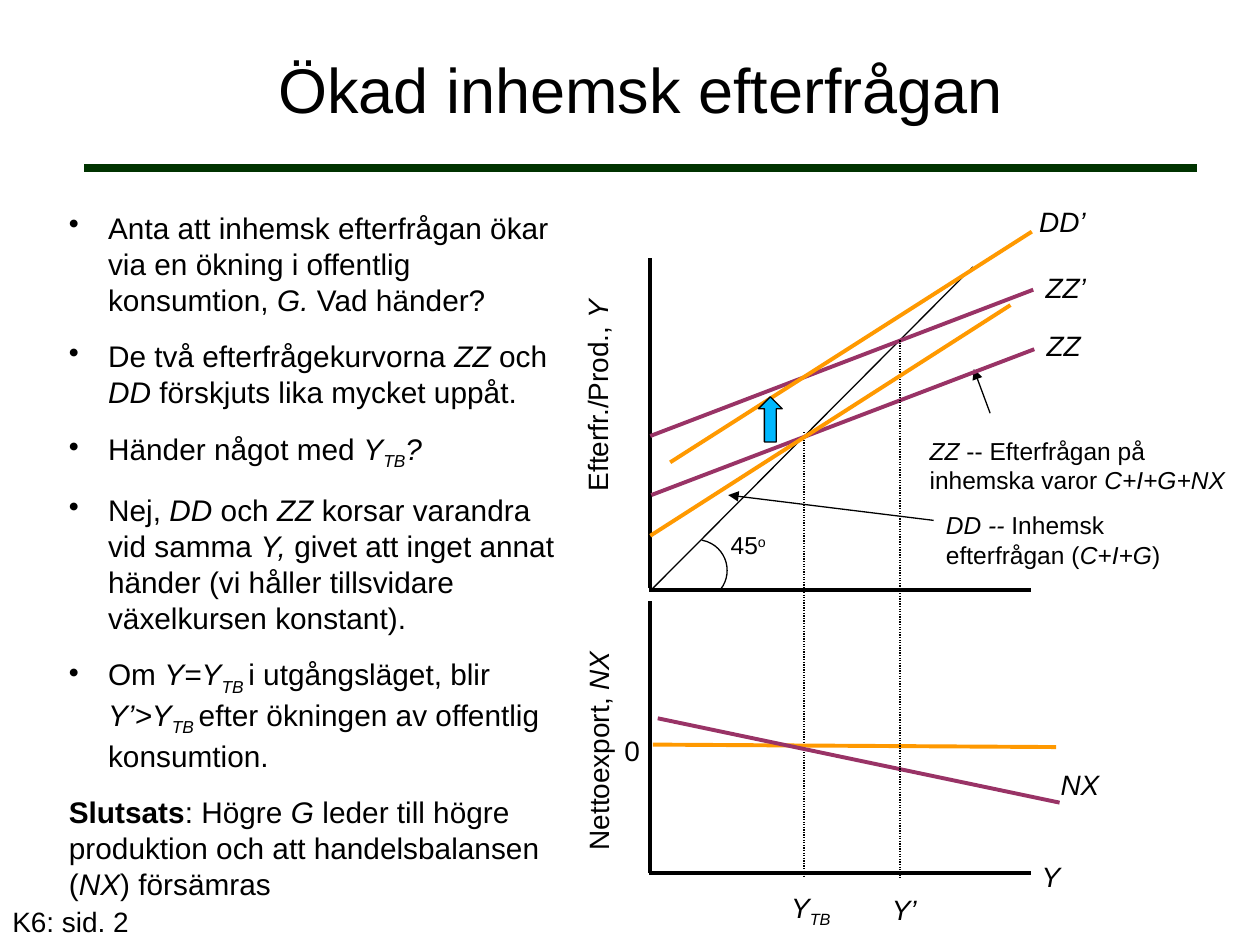
"""Build the slide on how higher domestic demand shifts output and net exports."""
from dataclasses import dataclass

from lxml import etree
from pptx import Presentation
from pptx import util as u
from pptx.dml.color import RGBColor
from pptx.enum import dml, shapes, text
from pptx.oxml.ns import qn


@dataclass(frozen=True)
class Theme:
    font: str = "Arial"
    ink: str = "000000"
    paper: str = "FFFFFF"
    rule: str = "003300"
    domestic: str = "FF9900"
    demand: str = "993366"
    shift: str = "00B8FF"
    title: int = 36
    body: int = 17
    label: int = 16
    note: int = 14
    heavy: float = 4.5
    medium: float = 2.25
    thin: float = 0.75


THEME = Theme()
TOGGLES = {"*": "italic", "#": "bold", "~": "subscript", "^": "superscript"}


@dataclass(frozen=True)
class Line:
    x1: float
    y1: float
    x2: float
    y2: float
    color: str = THEME.ink
    width: float = THEME.medium
    dotted: bool = False
    arrow: bool = False


@dataclass(frozen=True)
class Label:
    content: str
    left: float
    top: float
    width: float
    height: float = 0.94
    size: int = THEME.label
    rotation: int = 0
    wrap: bool = True
    centered: bool = False


LINES = [
    Line(1.7, 3.39, 24.13, 3.39, THEME.rule, THEME.heavy),
    Line(13.11, 5.21, 13.11, 11.86),
    Line(13.08, 11.89, 20.78, 11.89),
    Line(16.21, 8.71, 16.21, 17.68, width=THEME.thin, dotted=True),
    Line(19.96, 8.33, 19.63, 7.44, width=THEME.thin, arrow=True),
    Line(13.13, 9.98, 20.85, 7.04, THEME.demand),
    Line(13.16, 11.86, 19.61, 5.38, width=THEME.thin),
    Line(13.11, 12.12, 13.11, 17.6),
    Line(13.08, 17.6, 20.78, 17.6),
    Line(13.16, 15.01, 21.29, 15.06, THEME.domestic),
    Line(13.26, 14.48, 21.36, 16.18, THEME.demand),
    Line(18.82, 10.49, 14.68, 9.98, width=THEME.thin, arrow=True),
    Line(13.11, 8.79, 20.83, 5.84, THEME.demand),
    Line(18.14, 6.86, 18.14, 17.7, width=THEME.thin, dotted=True),
    Line(13.11, 10.8, 20.37, 6.15, THEME.domestic),
    Line(13.51, 9.32, 20.8, 4.67, THEME.domestic),
]

LABELS = [
    Label("Ökad inhemsk efterfrågan", 1.7, 0.2, 22.43, 3.18, THEME.title, centered=True),
    Label("Efterfr./Prod., *Y*", 9.83, 7.47, 4.42, rotation=270, wrap=False),
    Label("Nettoexport, *NX*", 9.8, 14.66, 4.52, rotation=270, wrap=False),
    Label("*Y~TB~*", 15.7, 17.83, 1.68),
    Label("*Y’*", 17.73, 17.86, 1.68),
    Label("*Y*", 20.75, 17.2, 0.89, wrap=False),
    Label("0", 12.34, 14.66, 0.81, wrap=False),
    Label("*NX*", 21.13, 15.34, 3.53),
    Label("*ZZ*", 20.85, 6.5, 1.55),
    Label("*ZZ’*", 20.83, 5.33, 1.55),
    Label("*DD’*", 20.7, 3.99, 1.45, wrap=False),
    Label("45^o^", 14.48, 10.57, 1.24, 0.86, THEME.note, wrap=False),
    Label("*ZZ *-- Efterfrågan på inhemska varor *C+I+G+NX*",
          18.49, 8.66, 6.93, 2.29, THEME.note),
    Label("*DD -- *Inhemsk efterfrågan (*C+I+G*)", 18.82, 10.16, 5.84, 1.45, THEME.note),
    Label("K6: sid. 2", 0, 18.11, 5.28),
]

BULLETS = [
    "Anta att inhemsk efterfrågan ökar via en ökning i offentlig konsumtion, *G. *Vad händer?",
    "De två efterfrågekurvorna *ZZ* och *DD *förskjuts lika mycket uppåt.",
    "Händer något med *Y~TB~?*",
    "Nej, *DD *och* ZZ *korsar varandra vid samma *Y, *givet att inget annat händer "
    "(vi håller tillsvidare växelkursen konstant).",
    "Om *Y=Y~TB ~*i utgångsläget, blir *Y’>Y~TB ~*efter ökningen av offentlig konsumtion.",
]
CONCLUSION = ("#Slutsats#: Högre *G *leder till högre produktion och att "
              "handelsbalansen (*NX*) försämras")


def write(paragraph, content: str, size: int) -> None:
    """Fill a paragraph, toggling styles at each marker character."""
    font = paragraph.font
    font.name, font.size = THEME.font, u.Pt(size)
    font.color.rgb = RGBColor.from_string(THEME.ink)
    active, piece = set(), ""
    for character in content + "\0":
        if character not in TOGGLES and character != "\0":
            piece += character
            continue
        if piece:
            run = paragraph.add_run()
            run.text, piece = piece, ""
            run.font.italic = True if "italic" in active else None
            run.font.bold = True if "bold" in active else None
            if "subscript" in active:
                run.font._element.set("baseline", "-25000")
            if "superscript" in active:
                run.font._element.set("baseline", "30000")
        if character in TOGGLES:
            active ^= {TOGGLES[character]}


def draw_line(slide, line: Line) -> None:
    """Draw a straight line, dotted or with an arrowhead if asked."""
    connector = slide.shapes.add_connector(
        shapes.MSO_CONNECTOR.STRAIGHT,
        u.Cm(line.x1), u.Cm(line.y1), u.Cm(line.x2), u.Cm(line.y2))
    connector.line.color.rgb = RGBColor.from_string(line.color)
    connector.line.width = u.Pt(line.width)
    if line.dotted:
        connector.line.dash_style = dml.MSO_LINE.ROUND_DOT
    if line.arrow:
        etree.SubElement(connector.line._get_or_add_ln(), qn("a:tailEnd"), type="triangle")
    etree.SubElement(connector._element.spPr, qn("a:effectLst"))


def draw_label(slide, label: Label) -> None:
    """Draw a one-paragraph text box."""
    box = slide.shapes.add_textbox(
        u.Cm(label.left), u.Cm(label.top), u.Cm(label.width), u.Cm(label.height))
    box.rotation = label.rotation
    frame = box.text_frame
    frame.word_wrap = label.wrap
    paragraph = frame.paragraphs[0]
    if label.centered:
        frame.vertical_anchor = text.MSO_ANCHOR.MIDDLE
        paragraph.alignment = text.PP_ALIGN.CENTER
    write(paragraph, label.content, label.size)


def draw_body(slide) -> None:
    """Draw the bulleted argument and its conclusion."""
    box = slide.shapes.add_textbox(u.Cm(1.14), u.Cm(4.11), u.Cm(10.46), u.Cm(13.69))
    box.fill.solid()
    box.fill.fore_color.rgb = RGBColor.from_string(THEME.paper)
    frame = box.text_frame
    frame.word_wrap = True
    for index, content in enumerate([*BULLETS, CONCLUSION]):
        paragraph = frame.add_paragraph() if index else frame.paragraphs[0]
        write(paragraph, content, THEME.body)
        paragraph.space_after = u.Pt(12)
        if content != CONCLUSION:
            properties = paragraph._p.get_or_add_pPr()
            properties.set("marL", str(u.Cm(0.79)))
            properties.set("indent", str(-u.Cm(0.79)))
            bullet = etree.Element(qn("a:buChar"), char="•")
            properties.find(qn("a:defRPr")).addprevious(bullet)


def draw_shape(slide, kind, left: float, top: float, width: float, height: float):
    """Draw a thinly outlined preset shape without shadow."""
    shape = slide.shapes.add_shape(kind, u.Cm(left), u.Cm(top), u.Cm(width), u.Cm(height))
    shape.shadow.inherit = False
    shape.line.color.rgb = RGBColor.from_string(THEME.ink)
    shape.line.width = u.Pt(THEME.thin)
    return shape


def main() -> None:
    """Build and save the presentation."""
    presentation = Presentation()
    presentation.slide_width, presentation.slide_height = u.Cm(25.4), u.Cm(19.05)
    slide = presentation.slides.add_slide(presentation.slide_layouts[6])
    draw_body(slide)
    for line in LINES:
        draw_line(slide, line)
    angle = draw_shape(slide, shapes.MSO_SHAPE.ARC, 13.42, 10.88, 1.24, 1.24)
    angle.adjustments[0], angle.adjustments[1] = 168, 24
    angle.fill.background()
    arrow = draw_shape(slide, shapes.MSO_SHAPE.UP_ARROW, 15.29, 8, 0.48, 0.91)
    arrow.fill.solid()
    arrow.fill.fore_color.rgb = RGBColor.from_string(THEME.shift)
    for label in LABELS:
        draw_label(slide, label)
    presentation.save("out.pptx")


if __name__ == "__main__":
    main()
